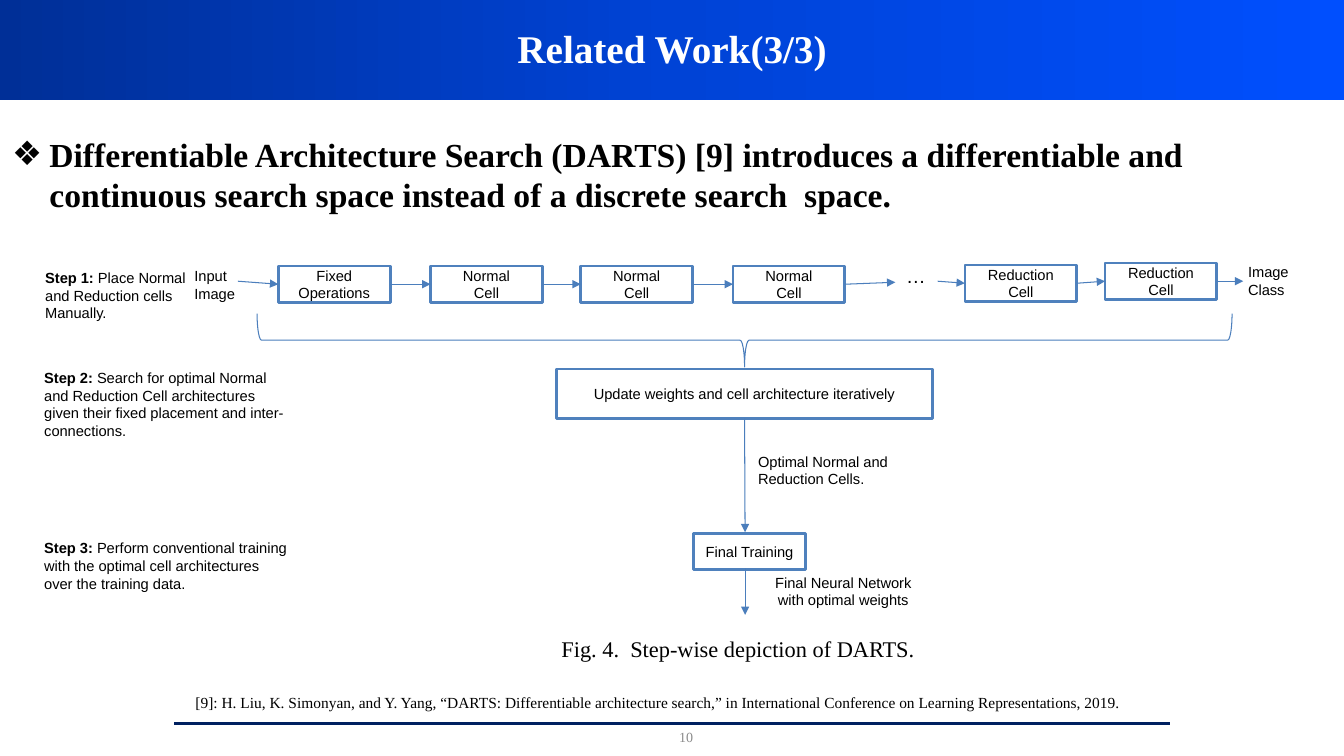
"""Build the DARTS related-work slide with its step-wise flow diagram."""
from copy import deepcopy

from lxml import etree
from pptx import Presentation
from pptx import util as u
from pptx.dml.color import RGBColor
from pptx.enum import shapes, text
from pptx.oxml import ns

PX = 9144
WHITE = RGBColor(0xFF, 0xFF, 0xFF)
BLACK = RGBColor(0, 0, 0)
GRAY = RGBColor(0x8B, 0x8B, 0x8B)
NAVY = RGBColor(0x00, 0x20, 0x60)
BOX_BLUE = RGBColor(0x4F, 0x81, 0xBD)
ARROW_BLUE = RGBColor(0x4B, 0x7E, 0xBC)
HEADER_BLUES = (RGBColor(0x00, 0x2F, 0x97), RGBColor(0x00, 0x43, 0xD6),
                RGBColor(0x00, 0x4F, 0xFE))

SERIF = "Times New Roman"
TITLE = {"name": SERIF, "size": u.Pt(28), "bold": True}
BODY = {"name": SERIF, "size": u.Pt(24), "bold": True}
LABEL = {"name": "Arial", "size": u.Pt(10.5), "bold": False}
DOTS = {"name": "Arial", "size": u.Pt(14)}
CAPTION = {"name": SERIF, "size": u.Pt(16)}
REFERENCE = {"name": SERIF, "size": u.Pt(11)}
PAGE = {"name": SERIF, "size": u.Pt(10)}

TOP, LEFT, BOTTOM, RIGHT = range(4)
BOX_W, BOX_H = 111, 36
CELLS = [
    (276, 264, "Fixed Operations"),
    (427, 264, "Normal\nCell"),
    (576, 264, "Normal\nCell"),
    (727, 264, "Normal\nCell"),
    (957, 263, "Reduction\nCell"),
    (1096, 261, "Reduction\nCell"),
]
STEPS = [
    ((35, 262, 167, 63), "Step 1: ",
     "Place Normal and Reduction cells Manually."),
    ((34, 361, 262, 81), "Step 2: ",
     "Search for optimal Normal and Reduction Cell architectures given their "
     "fixed placement and inter-connections."),
    ((34, 530, 262, 63), "Step 3: ",
     "Perform conventional training with the optimal cell architectures over "
     "the training data."),
]
LABELS = [
    ((889, 257, 47, 34), "…", DOTS),
    ((1228, 256, 69, 45), "Image Class", LABEL),
    ((183, 260, 73, 45), "Input\nImage", LABEL),
    ((742, 444, 171, 45), "Optimal Normal and Reduction Cells.", LABEL),
    ((547, 625, 380, 34), "Fig. 4.  Step-wise depiction of DARTS.", CAPTION),
    ((184, 683, 1038, 29),
     "[9]: H. Liu, K. Simonyan, and Y. Yang, “DARTS: Differentiable "
     "architecture search,” in International Conference on Learning "
     "Representations, 2019.", REFERENCE),
]


def emu(*lengths):
    """Turn px lengths into EMU."""
    return [u.Emu(n * PX) for n in lengths]


def format_run(r, fmt, color=BLACK):
    """Apply font values and a colour to a run."""
    for key, value in fmt.items():
        setattr(r.font, key, value)
    r.font.color.rgb = color


def write(tf, words, fmt, color=BLACK, align=text.PP_ALIGN.LEFT):
    """Fill a text frame with evenly formatted paragraphs."""
    tf.word_wrap = True
    tf.text = words
    for p in tf.paragraphs:
        p.alignment = align
        for r in p.runs:
            format_run(r, fmt, color)


def place(sp, at):
    """Move and size a shape."""
    for key, value in zip(("left", "top", "width", "height"), emu(*at)):
        setattr(sp, key, value)


def add_header(s):
    """Add the gradient band behind the title."""
    sp = s.shapes.add_shape(shapes.MSO_SHAPE.RECTANGLE, *emu(0, 0, 1333, 99))
    sp.shadow.inherit = False
    sp.line.fill.background()
    sp.fill.gradient()
    sp.fill.gradient_angle = 0
    first = next(sp._element.iter(ns.qn("a:gs")))
    first.addnext(deepcopy(first))
    for i, (stop, color) in enumerate(zip(sp.fill.gradient_stops, HEADER_BLUES)):
        stop.position = i / 2
        stop.color.rgb = color
    s.shapes._spTree.insert(2, sp._element)


def fill_title(s):
    """Place and fill the title placeholder."""
    sp = s.shapes.title
    place(sp, (68, 5, 1197, 85))
    write(sp.text_frame, "Related Work(3/3)", TITLE, WHITE, text.PP_ALIGN.CENTER)
    sp.text_frame.vertical_anchor = text.MSO_ANCHOR.MIDDLE
    sp.text_frame.auto_size = text.MSO_AUTO_SIZE.NONE


def fill_body(s):
    """Place and fill the bulleted body placeholder."""
    sp = s.placeholders[1]
    place(sp, (1, 128, 1200, 100))
    tf = sp.text_frame
    tf.auto_size = text.MSO_AUTO_SIZE.NONE
    write(tf, "Differentiable Architecture Search (DARTS) [9] introduces a "
          "differentiable and continuous search space instead of a discrete "
          "search  space.", BODY)
    p = tf.paragraphs[0]
    pPr = p._p.get_or_add_pPr()
    pPr.set("marL", str(38 * PX))
    pPr.set("indent", str(-37 * PX))
    etree.SubElement(pPr, ns.qn("a:buChar")).set("char", "❖")
    p.space_before = u.Pt(0)


def add_box(s, at, words):
    """Add a white outlined box with centred text."""
    sp = s.shapes.add_shape(shapes.MSO_SHAPE.RECTANGLE, *emu(*at))
    sp.shadow.inherit = False
    sp.fill.solid()
    sp.fill.fore_color.rgb = WHITE
    sp.line.color.rgb = BOX_BLUE
    sp.line.width = u.Pt(2)
    write(sp.text_frame, words, LABEL, align=text.PP_ALIGN.CENTER)
    sp.text_frame.vertical_anchor = text.MSO_ANCHOR.MIDDLE
    return sp


def add_label(s, at, words, fmt, color=BLACK, align=text.PP_ALIGN.LEFT):
    """Add a wrapped text box."""
    tf = s.shapes.add_textbox(*emu(*at)).text_frame
    write(tf, words, fmt, color, align)
    return tf


def add_step(s, at, name, words):
    """Add a step description with a bold name."""
    tf = add_label(s, at, name, {**LABEL, "bold": True})
    r = tf.paragraphs[0].add_run()
    r.text = words
    format_run(r, LABEL)


def add_line(s, start, end, color=ARROW_BLUE, width=0.75, arrow=True):
    """Add a line between points or (box, side) pairs."""
    free = [(0, 0) if hasattr(e[0], "shape_id") else e for e in (start, end)]
    c = s.shapes.add_connector(shapes.MSO_CONNECTOR.STRAIGHT,
                               *emu(*free[0], *free[1]))
    for connect, e in ((c.begin_connect, start), (c.end_connect, end)):
        if hasattr(e[0], "shape_id"):
            connect(*e)
    c.line.color.rgb = color
    c.line.width = u.Pt(width)
    if arrow:
        etree.SubElement(c.line._get_or_add_ln(),
                         ns.qn("a:tailEnd")).set("type", "triangle")
    etree.SubElement(c._element.spPr, ns.qn("a:effectLst"))


def add_brace(s):
    """Add the brace that gathers the cell row."""
    sp = s.shapes.add_shape(shapes.MSO_SHAPE.LEFT_BRACE,
                            *emu(712, -146, 53, 967))
    sp.rotation = 270
    sp.shadow.inherit = False
    sp.fill.background()
    sp.line.color.rgb = ARROW_BLUE
    sp.line.width = u.Pt(0.75)


def main():
    """Build and save the slide."""
    prs = Presentation()
    prs.slide_width, prs.slide_height = emu(1333, 750)
    s = prs.slides.add_slide(prs.slide_layouts[1])
    add_header(s)
    fill_title(s)
    fill_body(s)
    add_line(s, (173, 718), (1160, 718), NAVY, 2.5, False)
    page = add_label(s, (525, 723, 311, 16), "10", PAGE, GRAY,
                     text.PP_ALIGN.CENTER)
    page.vertical_anchor = text.MSO_ANCHOR.MIDDLE

    cells = [add_box(s, (x, y, BOX_W, BOX_H), words) for x, y, words in CELLS]
    update = add_box(s, (552, 366, 373, 49),
                     "Update weights and cell architecture iteratively")
    add_box(s, (688, 529, BOX_W, BOX_H), "Final Training")
    add_brace(s)
    for i in (0, 1, 2, 4):
        add_line(s, (cells[i], RIGHT), (cells[i + 1], LEFT))
    add_line(s, (236, 279), (cells[0], LEFT))
    add_line(s, (cells[3], RIGHT), (888, 280))
    add_line(s, (930, 279), (cells[4], LEFT))
    add_line(s, (cells[5], RIGHT), (1233, 279))
    add_line(s, (update, BOTTOM), (739, 528))
    add_line(s, (739, 564), (739, 610))

    for step in STEPS:
        add_step(s, *step)
    for label in LABELS:
        add_label(s, *label)
    add_label(s, (751, 564, 171, 45), "Final Neural Network\nwith optimal weights",
              LABEL, align=text.PP_ALIGN.CENTER)
    prs.save("out.pptx")


if __name__ == "__main__":
    main()
